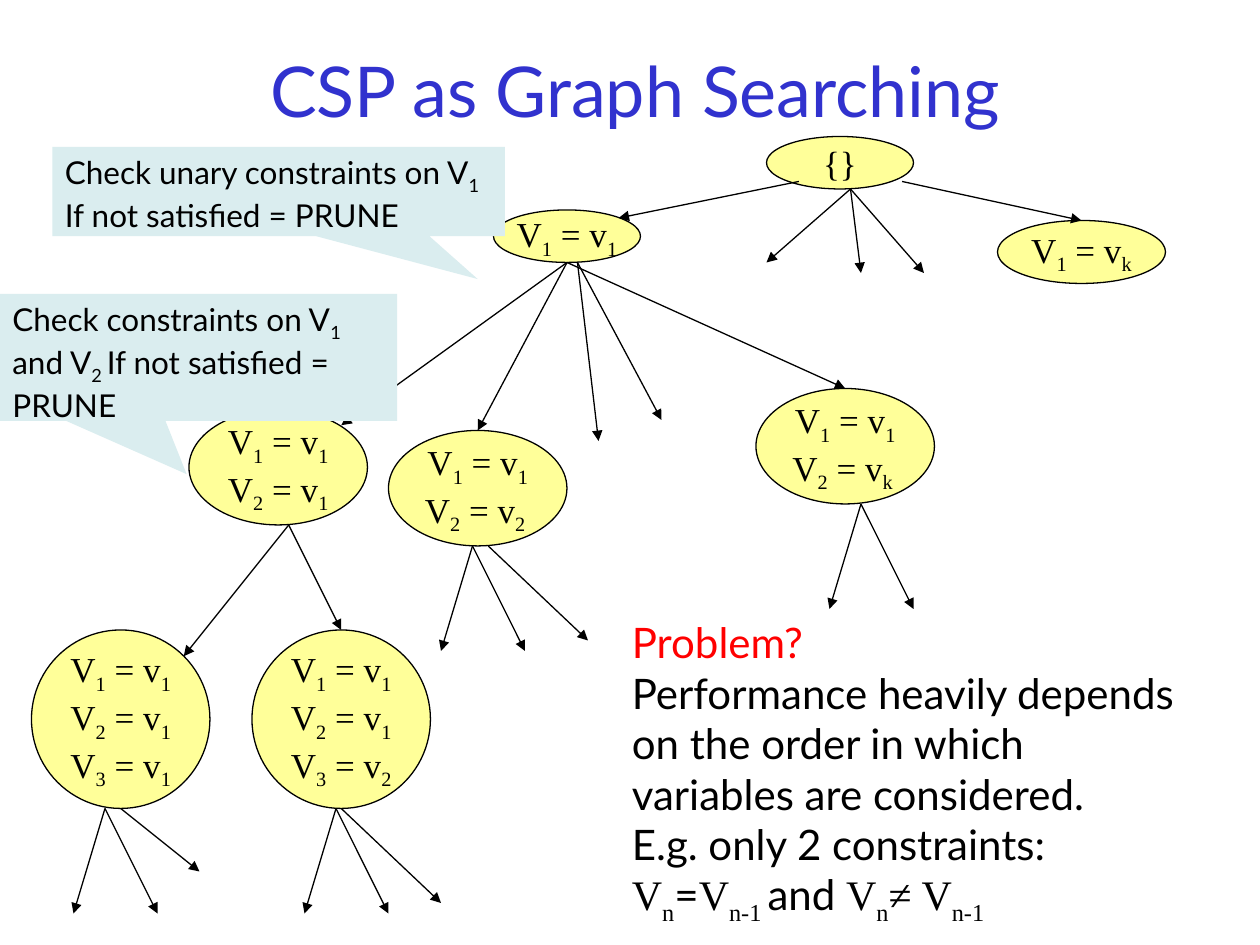
"""Builds a slide that shows constraint satisfaction as a graph search."""
from lxml import etree
from pptx import Presentation
from pptx.dml.color import RGBColor
from pptx.enum import shapes, text
from pptx.oxml import ns
from pptx.util import Pt

BLACK = RGBColor(0x00, 0x00, 0x00)
BLUE = RGBColor(0x31, 0x32, 0xCE)
RED = RGBColor(0xFF, 0x00, 0x00)
YELLOW = RGBColor(0xFF, 0xFF, 0x99)
PALE_TEAL = RGBColor(0xDA, 0xED, 0xEF)
SANS = "Lato"
SERIF = "Times New Roman"

NODES = [
    ((438, 78, 84, 30), ["{}"]),
    ((282, 120, 84, 30), ["V_1_ = v_1_"]),
    ((570, 126, 96, 36), ["V_1_ = v_k_"]),
    ((108, 234, 102, 66), ["V_1_ = v_1_", "V_2_ = v_1_"]),
    ((222, 246, 102, 66), ["V_1_ = v_1_", "V_2_ = v_2 _"]),
    ((432, 222, 102, 66), ["V_1_ = v_1_", "V_2_ = v_k _"]),
    ((18, 360, 102, 102), ["V_1_ = v_1_", "V_2_ = v_1_", "V_3_ = v_1_"]),
    ((144, 360, 102, 102), ["V_1_ = v_1_", "V_2_ = v_1_", "V_3_ = v_2_"]),
]

BRANCHES = {
    (456.5, 103.7): [(353.5, 124.6)],
    (515.5, 103.7): [(618, 126)],
    (486, 108): [(438, 150), (492, 156), (528, 156)],
    (324, 150): [(195, 243), (483, 222), (273, 246)],
    (330, 150): [(342, 252), (378, 240)],
    (492, 288): [(474, 348), (522, 348)],
    (165, 300): [(195, 360), (105, 375)],
    (270, 312): [(252, 372), (300, 372)],
    (279, 312): [(336, 366)],
    (60, 462): [(42, 522), (90, 522)],
    (69, 462): [(114, 498)],
    (192, 462): [(174, 522), (222, 522)],
    (195, 462): [(252, 516)],
}

CALLOUTS = [
    ((30, 84, 258.5, 51), (0.44, 0.98), False,
     ["Check unary constraints on V_1_", "If not satisfied = PRUNE"]),
    ((0, 168, 227, 72.5), (-0.03, 0.92), True,
     ["Check constraints on V_1_", "and V_2 _If not satisfied = PRUNE"]),
]

PROBLEM = [("on the order in which variables are considered.\n"
            "E.g. only 2 constraints:\n", SANS),
           ("V_n_", SERIF), ("=", SANS), ("V_n-1 _", SERIF),
           ("and ", SANS), ("V_n_≠ V_n-1_", SERIF)]


def add_runs(p, markup, font=None):
    """Add runs to a paragraph; underscores enclose subscripts, newlines break."""
    for i, part in enumerate(markup.split("_")):
        for j, line in enumerate(part.split("\n")):
            if j:
                p.add_line_break()
            if not line:
                continue
            r = p.add_run()
            r.text = line
            if font:
                r.font.name = font
            if i % 2:
                r._r.get_or_add_rPr().set("baseline", "-25000")


def add_paragraph(tf, size, color, font=None, align=text.PP_ALIGN.LEFT):
    """Return a styled paragraph, using the empty first one when there is one."""
    p = tf.paragraphs[0] if not tf.paragraphs[0].runs else tf.add_paragraph()
    p.alignment = align
    p.font.size = Pt(size)
    p.font.color.rgb = color
    if font:
        p.font.name = font
    return p


def add_filled(s, kind, box, fill):
    """Add a preset shape with a plain fill and no shadow."""
    sp = s.shapes.add_shape(kind, *map(Pt, box))
    sp.shadow.inherit = False
    sp.fill.solid()
    sp.fill.fore_color.rgb = fill
    return sp


def add_node(s, box, lines):
    """Add an ellipse that lists variable assignments."""
    sp = add_filled(s, shapes.MSO_SHAPE.OVAL, box, YELLOW)
    sp.line.color.rgb = BLACK
    sp.line.width = Pt(0.75)
    tf = sp.text_frame
    tf.word_wrap = False
    tf.vertical_anchor = text.MSO_ANCHOR.MIDDLE
    for line in lines:
        add_runs(add_paragraph(tf, 20, BLACK, SERIF, text.PP_ALIGN.CENTER), line)


def add_arrow(s, start, end):
    """Add a thin line with an arrowhead at its end."""
    line = s.shapes.add_connector(shapes.MSO_CONNECTOR.STRAIGHT,
                                  *map(Pt, start + end))
    line.line.color.rgb = BLACK
    line.line.width = Pt(0.75)
    etree.SubElement(line.line._get_or_add_ln(), ns.qn("a:tailEnd"), type="triangle")
    etree.SubElement(line._element.spPr, ns.qn("a:effectLst"))


def add_callout(s, box, tip, wrap, lines):
    """Add a rectangular callout whose tip is given relative to its centre."""
    sp = add_filled(s, shapes.MSO_SHAPE.RECTANGULAR_CALLOUT, box, PALE_TEAL)
    sp.adjustments[0], sp.adjustments[1] = tip
    sp.line.fill.background()
    tf = sp.text_frame
    tf.word_wrap = wrap
    tf.auto_size = text.MSO_AUTO_SIZE.SHAPE_TO_FIT_TEXT
    tf.vertical_anchor = text.MSO_ANCHOR.TOP
    for line in lines:
        add_runs(add_paragraph(tf, 18, BLACK, SANS), line)


def add_text_frame(s, box):
    """Add a wrapping text box and return its text frame."""
    tf = s.shapes.add_textbox(*map(Pt, box)).text_frame
    tf.word_wrap = True
    return tf


def add_title(s):
    """Add the centred slide title."""
    tf = add_text_frame(s, (24, 18, 678, 66))
    tf.vertical_anchor = text.MSO_ANCHOR.MIDDLE
    p = add_paragraph(tf, 40, BLUE, SANS, text.PP_ALIGN.CENTER)
    add_runs(p, "CSP as Graph Searching")


def add_problem(s):
    """Add the remark on variable ordering."""
    tf = add_text_frame(s, (354, 349, 336, 211))
    tf.auto_size = text.MSO_AUTO_SIZE.SHAPE_TO_FIT_TEXT
    add_runs(add_paragraph(tf, 24, RED, SANS), "Problem?")
    add_runs(add_paragraph(tf, 24, BLACK, SANS), "Performance heavily depends")
    p = add_paragraph(tf, 24, BLACK)
    for markup, font in PROBLEM:
        add_runs(p, markup, font)


def main():
    """Build and save the slide."""
    prs = Presentation()
    prs.slide_width, prs.slide_height = Pt(720), Pt(540)
    s = prs.slides.add_slide(prs.slide_layouts[6])
    add_title(s)
    for box, lines in NODES:
        add_node(s, box, lines)
    for start, ends in BRANCHES.items():
        for end in ends:
            add_arrow(s, start, end)
    for callout in CALLOUTS:
        add_callout(s, *callout)
    add_problem(s)
    prs.save("out.pptx")


if __name__ == "__main__":
    main()
